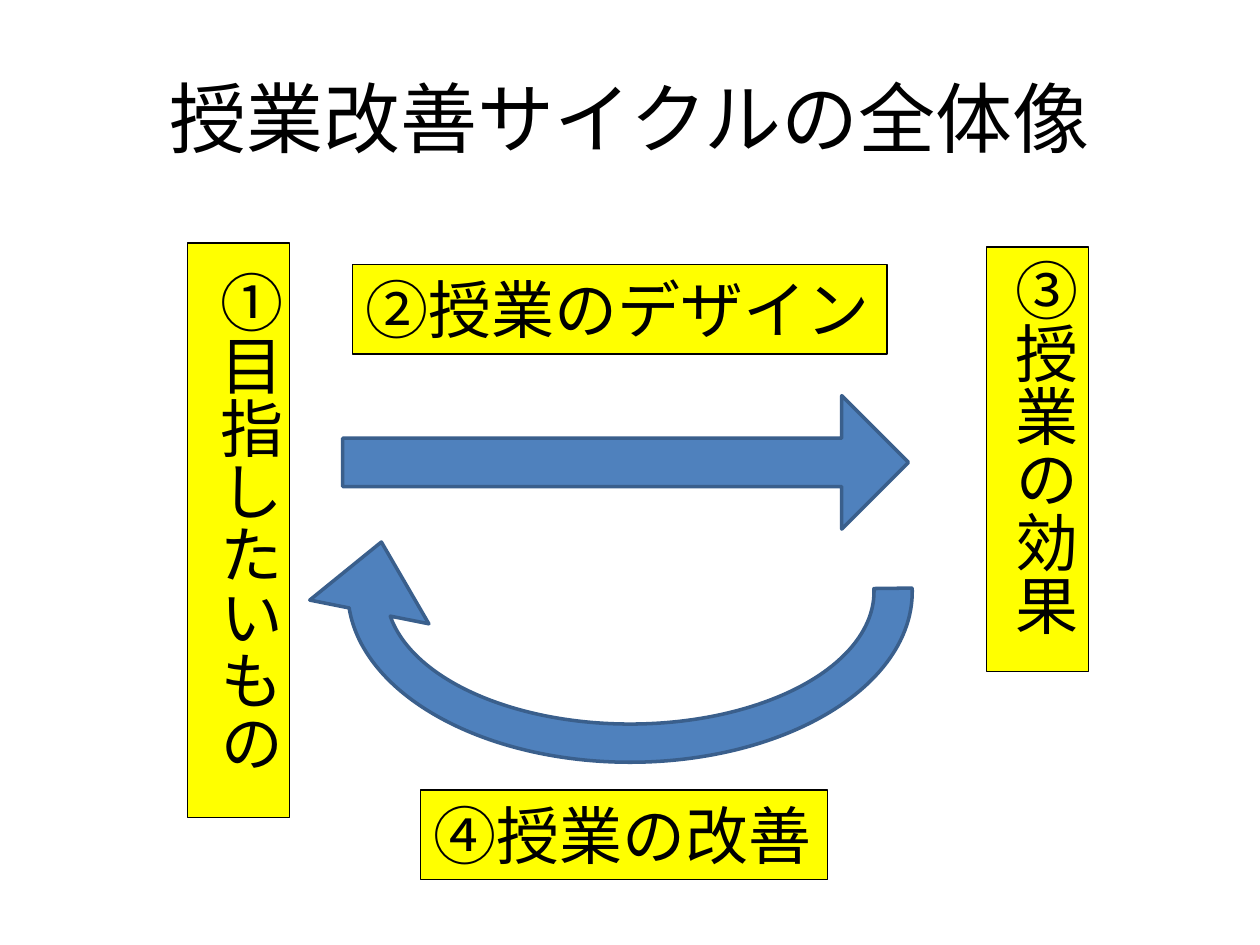
from dataclasses import dataclass

from pptx import Presentation
from pptx.dml.color import RGBColor
from pptx.enum.shapes import MSO_SHAPE
from pptx.enum.text import MSO_ANCHOR, MSO_AUTO_SIZE, PP_ALIGN
from pptx.oxml.ns import qn
from pptx.util import Inches, Pt


@dataclass(frozen=True)
class Theme:
    font: str = "Roboto"
    text: str = "000000"
    label_fill: str = "FFFF00"
    label_line: str = "000000"
    arrow_fill: str = "4F81BD"
    arrow_line: str = "3A5F8C"
    title_size: int = 44
    label_size: int = 36
    label_width: float = 0.75
    arrow_width: float = 2


class SlideBuilder:
    def __init__(self, slide, theme):
        self.s = slide
        self.theme = theme

    def add_text(self, tf, text, size, align):
        p = tf.paragraphs[0]
        p.alignment = align
        r = p.add_run()
        r.text = text
        for name, value in {"name": self.theme.font, "size": Pt(size)}.items():
            setattr(r.font, name, value)
        r.font.color.rgb = RGBColor.from_string(self.theme.text)
        # East Asian characters use the same typeface
        rPr = r._r.get_or_add_rPr()
        rPr.append(rPr.makeelement(qn("a:ea"), {"typeface": self.theme.font}))

    def paint(self, sp, fill, line, width):
        sp.fill.solid()
        sp.fill.fore_color.rgb = RGBColor.from_string(fill)
        sp.line.color.rgb = RGBColor.from_string(line)
        sp.line.width = Pt(width)

    def title(self, text, box):
        sp = self.s.shapes.title
        for name, value in zip(("left", "top", "width", "height"), box):
            setattr(sp, name, Inches(value))
        sp.text_frame.vertical_anchor = MSO_ANCHOR.MIDDLE
        self.add_text(sp.text_frame, text, self.theme.title_size, PP_ALIGN.CENTER)

    def label(self, text, box, vertical=False, wrap=False):
        t = self.theme
        sp = self.s.shapes.add_textbox(*map(Inches, box))
        self.paint(sp, t.label_fill, t.label_line, t.label_width)
        tf = sp.text_frame
        for name, value in {"word_wrap": wrap,
                            "auto_size": MSO_AUTO_SIZE.SHAPE_TO_FIT_TEXT}.items():
            setattr(tf, name, value)
        if vertical:
            tf._txBody.bodyPr.set("vert", "eaVert")
        self.add_text(tf, text, t.label_size, PP_ALIGN.LEFT)

    def arrow(self, kind, box, adjustments, rotation=0):
        t = self.theme
        sp = self.s.shapes.add_shape(kind, *map(Inches, box))
        sp.shadow.inherit = False
        sp.rotation = rotation
        for i, value in enumerate(adjustments):
            sp.adjustments[i] = value
        self.paint(sp, t.arrow_fill, t.arrow_line, t.arrow_width)


def main():
    prs = Presentation()
    prs.slide_width, prs.slide_height = Inches(10), Inches(7.5)
    slide = SlideBuilder(prs.slides.add_slide(prs.slide_layouts[5]), Theme())

    slide.title("授業改善サイクルの全体像", (0.5, 0.3, 9, 1.25))

    # Goal on the left, design arrow to the effect on the right
    slide.label(" ①目指したいもの", (1.49, 1.93, 0.81, 4.56), vertical=True)
    slide.arrow(MSO_SHAPE.RIGHT_ARROW, (2.72, 3.14, 4.49, 1.06), (0.363, 0.5))
    slide.label("③授業の効果", (7.83, 1.96, 0.81, 3.37), vertical=True, wrap=True)
    slide.label("②授業のデザイン", (2.8, 2.1, 4.24, 0.71))

    # Improvement arrow back to the goal
    slide.arrow(MSO_SHAPE.CIRCULAR_ARROW, (2.43, 3.01, 5.14, 3.37),
                (0.09, 9.444, 213.319, 107.576, 0.143), rotation=180)
    slide.label("④授業の改善", (3.34, 6.27, 3.23, 0.71))

    prs.save("out.pptx")


if __name__ == "__main__":
    main()
